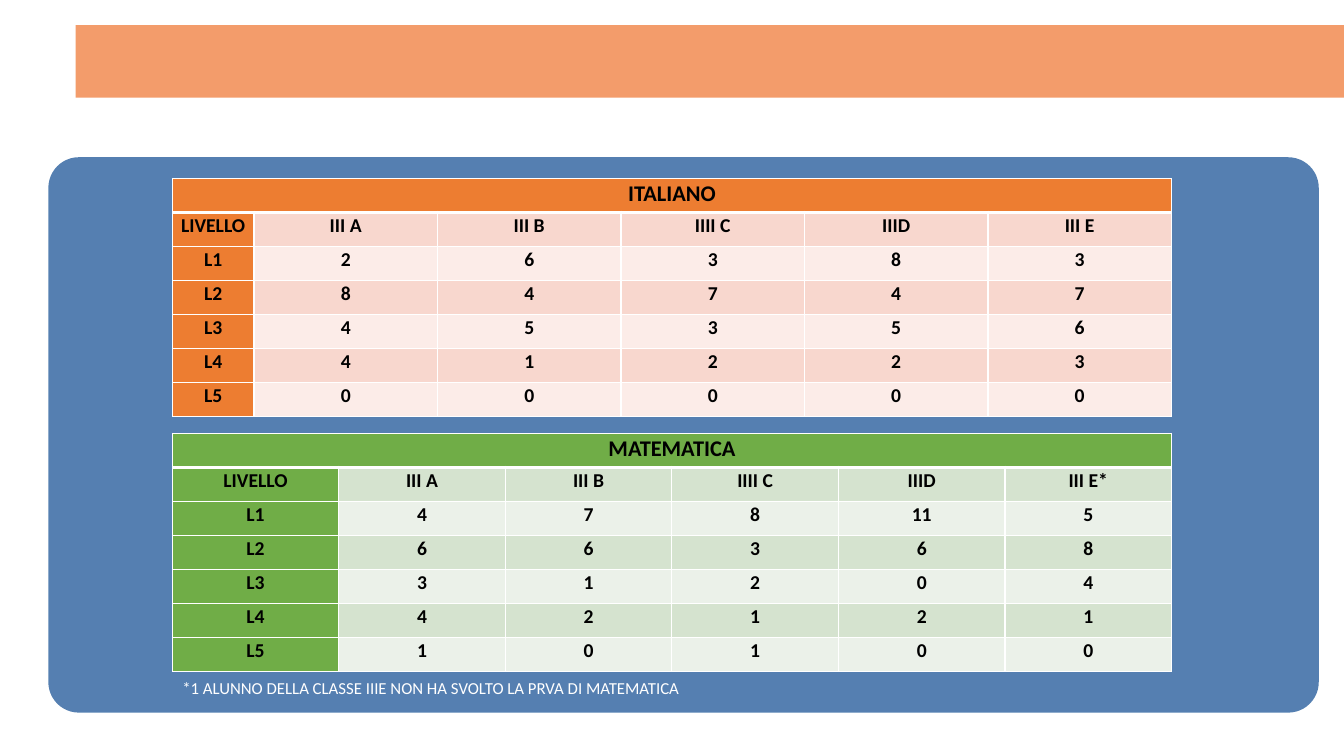
from lxml import etree
from pptx import Presentation
from pptx.dml.color import RGBColor
from pptx.enum.shapes import MSO_SHAPE
from pptx.enum.text import PP_ALIGN
from pptx.oxml.ns import qn
from pptx.util import Inches, Pt

RECT = MSO_SHAPE.RECTANGLE
ROUNDED = MSO_SHAPE.ROUNDED_RECTANGLE
CENTER = PP_ALIGN.CENTER
FONT = "Calibri"
COLORS = {
    "banner": "F39C6B", "panel": "0D4A91", "white": "FFFFFF", "black": "000000",
    "orange": "ED7D31", "orange_mid": "F8D7CE", "orange_light": "FCECE8",
    "green": "70AD47", "green_mid": "D5E3CF", "green_light": "EBF1E9",
}
TABLE_LEFT, TABLE_WIDTH, TABLE_HEIGHT = 1.71, 9.91, 2.36
ITALIANO = [
    ["LIVELLO", "III A", "III B", "IIII C", "IIID", "III E"],
    ["L1", 2, 6, 3, 8, 3],
    ["L2", 8, 4, 7, 4, 7],
    ["L3", 4, 5, 3, 5, 6],
    ["L4", 4, 1, 2, 2, 3],
    ["L5", 0, 0, 0, 0, 0],
]
MATEMATICA = [
    ["LIVELLO", "III A", "III B", "IIII C", "IIID", "III E*"],
    ["L1", 4, 7, 8, 11, 5],
    ["L2", 6, 6, 3, 6, 8],
    ["L3", 3, 1, 2, 0, 4],
    ["L4", 4, 2, 1, 2, 1],
    ["L5", 1, 0, 1, 0, 0],
]


def rgb(name):
    return RGBColor.from_string(COLORS[name])


def add_block(s, kind, left, top, width, height, color, alpha=None):
    sp = s.shapes.add_shape(kind, Inches(left), Inches(top), Inches(width), Inches(height))
    sp.shadow.inherit = False
    sp.fill.solid()
    sp.fill.fore_color.rgb = rgb(color)
    sp.line.fill.background()
    if alpha is not None:
        clr = sp._element.spPr.find(f"{qn('a:solidFill')}/{qn('a:srgbClr')}")
        etree.SubElement(clr, qn("a:alpha"), val=str(alpha * 1000))
    return sp


def write(tf, text, size, color, bold=False):
    p = tf.paragraphs[0]
    r = p.add_run()
    r.text = text
    r.font.name = FONT
    r.font.size = Pt(size)
    r.font.bold = bold
    r.font.color.rgb = rgb(color)
    return p


def set_borders(cell, top=1, bottom=1):
    tcPr = cell._tc.get_or_add_tcPr()
    for side, width in (("L", 1), ("R", 1), ("T", top), ("B", bottom)):
        ln = etree.SubElement(tcPr, qn(f"a:ln{side}"), w=str(Pt(width)))
        fill = etree.SubElement(ln, qn("a:solidFill"))
        etree.SubElement(fill, qn("a:srgbClr"), val=COLORS["white"])


def format_cell(cell, fill, top=1, bottom=1):
    set_borders(cell, top, bottom)
    cell.fill.solid()
    cell.fill.fore_color.rgb = rgb(fill)
    cell.margin_left = cell.margin_right = Inches(0.07)
    cell.margin_top = cell.margin_bottom = 0


def write_cell(cell, text, size):
    p = write(cell.text_frame, text, size, "black", bold=True)
    p.alignment = CENTER
    p.line_spacing = 1.07
    p.space_after = Pt(8)


def add_results(s, top, subject, rows, color, level_width):
    n_rows, n_cols = len(rows) + 1, len(rows[0])
    frame = s.shapes.add_table(n_rows, n_cols, Inches(TABLE_LEFT), Inches(top),
                               Inches(TABLE_WIDTH), Inches(TABLE_HEIGHT))
    table = frame.table
    class_width = (TABLE_WIDTH - level_width) / (n_cols - 1)
    for i, column in enumerate(table.columns):
        column.width = Inches(class_width if i else level_width)
    for row in table.rows:
        row.height = Inches(TABLE_HEIGHT / n_rows)

    for i in range(n_cols):
        format_cell(table.cell(0, i), color, bottom=3)
    table.cell(0, 0).merge(table.cell(0, n_cols - 1))
    write_cell(table.cell(0, 0), subject, 16)

    for i, values in enumerate(rows, 1):
        band = f"{color}_mid" if i % 2 else f"{color}_light"
        for j, value in enumerate(values):
            cell = table.cell(i, j)
            format_cell(cell, band if j else color, top=3 if i == 1 else 1)
            write_cell(cell, str(value), 14)


def add_note(s, left, top, width, height, text):
    sp = s.shapes.add_textbox(Inches(left), Inches(top), Inches(width), Inches(height))
    sp.text_frame.word_wrap = True
    write(sp.text_frame, text, 12, "white")


def main():
    prs = Presentation()
    prs.slide_width, prs.slide_height = Inches(13.33), Inches(7.5)
    s = prs.slides.add_slide(prs.slide_layouts[6])
    add_block(s, RECT, 0.75, 0.25, 12.58, 0.72, "banner")
    panel = add_block(s, ROUNDED, 0.48, 1.56, 12.6, 5.51, "panel", alpha=70)
    panel.adjustments[0] = 0.055
    add_results(s, 1.77, "ITALIANO", ITALIANO, "orange", 0.81)
    add_results(s, 4.3, "MATEMATICA", MATEMATICA, "green", 1.65)
    add_note(s, TABLE_LEFT, 6.67, 10.2, 0.3,
             "*1 ALUNNO DELLA CLASSE IIIE NON HA SVOLTO LA PRVA DI MATEMATICA")
    prs.save("out.pptx")


if __name__ == "__main__":
    main()
